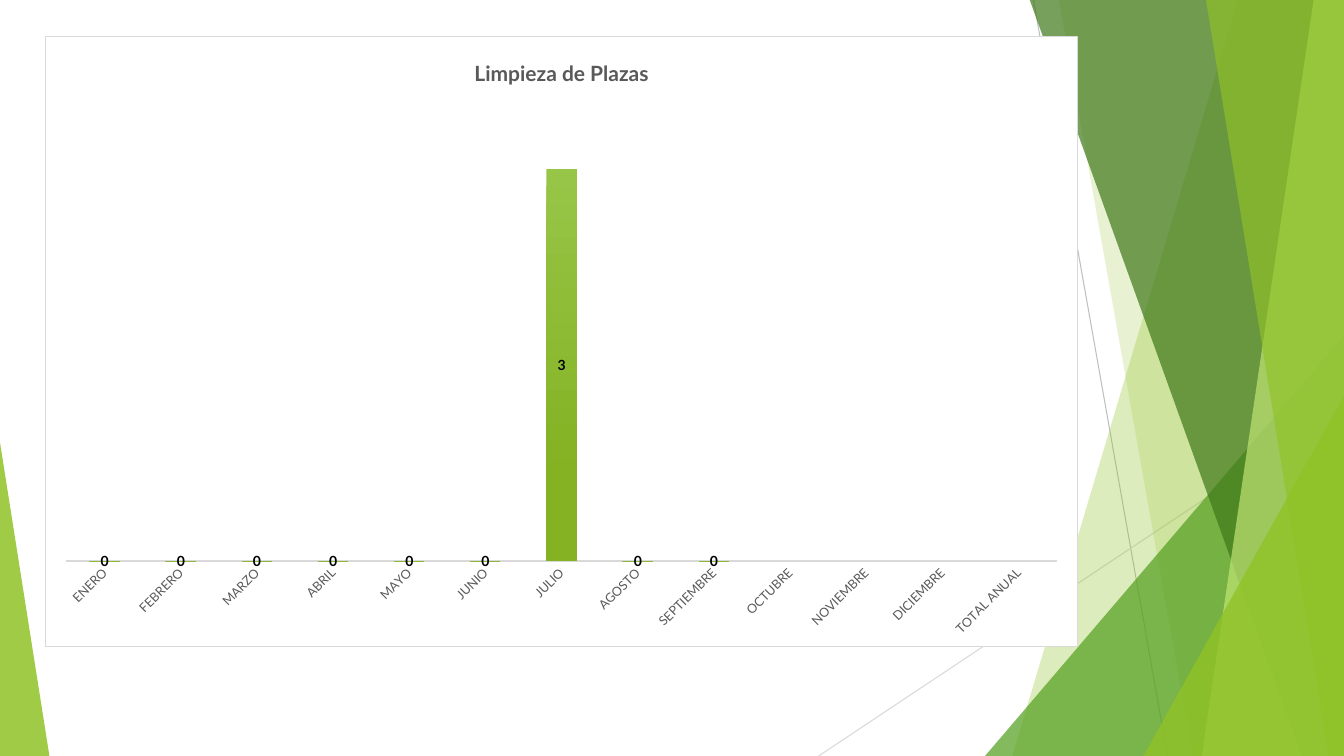
from dataclasses import dataclass

from lxml import etree
from pptx import Presentation
from pptx.chart.data import CategoryChartData
from pptx.dml.color import RGBColor as RGB
from pptx.enum.chart import XL_CHART_TYPE as CT, XL_LABEL_POSITION as LP, XL_TICK_MARK as TICK
from pptx.enum.shapes import MSO_CONNECTOR as CONN, MSO_SHAPE as SHAPE
from pptx.oxml import parse_xml
from pptx.oxml.ns import nsdecls, qn
from pptx.util import Inches, Pt


@dataclass(frozen=True)
class Theme:
    font: str = "Lato"
    white: str = "FFFFFF"
    black: str = "000000"
    text: str = "595959"
    rule: str = "D9D9D9"
    dark_rule: str = "BFBFBF"
    lime: str = "90C226"
    pale: str = "C0E474"
    green: str = "54A021"
    forest: str = "3F7819"
    bar_top: str = "97C547"
    bar_bottom: str = "84B223"
    title_size: float = 15
    label_size: float = 10
    axis_size: float = 9


T = Theme()
W, H = 13.33, 7.5
MONTHS = ["ENERO", "FEBRERO", "MARZO", "ABRIL", "MAYO", "JUNIO", "JULIO", "AGOSTO",
          "SEPTIEMBRE", "OCTUBRE", "NOVIEMBRE", "DICIEMBRE", "TOTAL ANUAL"]
CLEANINGS = [0, 0, 0, 0, 0, 0, 3, 0, 0, None, None, None, None]


def paint(shape, color, opacity):
    """Fill a borderless shape; opacity is a percentage."""
    shape.shadow.inherit = False
    shape.line.fill.background()
    shape.fill.solid()
    shape.fill.fore_color.rgb = RGB.from_string(color)
    clr = shape._element.spPr.find(f"{qn('a:solidFill')}/{qn('a:srgbClr')}")
    etree.SubElement(clr, qn("a:alpha"), val=str(opacity * 1000))


def add_line(s, start, end, color):
    line = s.shapes.add_connector(CONN.STRAIGHT, *map(Inches, start + end))
    line.line.color.rgb = RGB.from_string(color)
    line.line.width = Pt(0.75)
    etree.SubElement(line._element.spPr, qn("a:effectLst"))


def add_band(s, top_x, bottom_x, color, opacity):
    """Full-height band from a slanted left edge to the slide's right side."""
    top = -0.01
    fb = s.shapes.build_freeform(Inches(top_x), Inches(top), scale=1.0)
    corners = [(W, top), (W, H), (bottom_x, H)]
    fb.add_line_segments([(Inches(x), Inches(y)) for x, y in corners], close=True)
    paint(fb.convert_to_shape(), color, opacity)


def add_corner(s, left, top, width, apex, color, opacity):
    """Right triangle standing on the slide's bottom; apex 0 is left, 1 right."""
    tri = s.shapes.add_shape(SHAPE.ISOSCELES_TRIANGLE, Inches(left), Inches(top),
                             Inches(width), Inches(H - top))
    tri.adjustments[0] = apex
    paint(tri, color, opacity)


def add_backdrop(s):
    add_line(s, (10.25, 0), (11.58, H), T.dark_rule)
    add_line(s, (W, 4.03), (8.12, H), T.rule)
    add_band(s, 12.28, 10.04, T.lime, 30)
    add_band(s, 10.5, 11.83, T.lime, 20)
    add_corner(s, 9.77, 3.33, 3.56, 1, T.green, 72)
    add_band(s, 10.21, 12.91, T.forest, 70)
    add_band(s, 13.03, 11.92, T.pale, 70)
    add_band(s, 11.96, 13.18, T.lime, 65)
    add_corner(s, 11.34, 3.93, 1.99, 1, T.lime, 80)
    add_corner(s, 0, 4.39, 0.49, 0, T.lime, 85)


def set_font(font, size, color, bold=False):
    font.name, font.size, font.bold = T.font, Pt(size), bold
    font.color.rgb = RGB.from_string(color)


def frame_chart(chart):
    """Give the chart area its fill and border, and fix the plot's place."""
    chart._chartSpace.find(qn("c:chart")).addnext(parse_xml(
        f'<c:spPr {nsdecls("c", "a")}>'
        f'<a:solidFill><a:srgbClr val="{T.white}"/></a:solidFill>'
        f'<a:ln w="9525"><a:solidFill><a:srgbClr val="{T.rule}"/></a:solidFill></a:ln>'
        '</c:spPr>'))
    plot_area = chart._chartSpace.find(f".//{qn('c:plotArea')}")
    for old in plot_area.findall(qn("c:layout")):
        plot_area.remove(old)
    box = "".join(f'<c:{k} val="{v}"/>' for k, v in
                  [("layoutTarget", "inner"), ("xMode", "edge"), ("yMode", "edge"),
                   ("x", 0.02), ("y", 0.11), ("w", 0.96), ("h", 0.75)])
    plot_area.insert(0, parse_xml(
        f'<c:layout {nsdecls("c")}><c:manualLayout>{box}</c:manualLayout></c:layout>'))


def style_axes(chart):
    months, values = chart.category_axis, chart.value_axis
    months.major_tick_mark = months.minor_tick_mark = TICK.NONE
    months.format.line.color.rgb = RGB.from_string(T.rule)
    months.format.line.width = Pt(1)
    set_font(months.tick_labels.font, T.axis_size, T.text)
    body = months._element.find(f"{qn('c:txPr')}/{qn('a:bodyPr')}")
    body.set("rot", "-2700000")
    body.set("vert", "horz")
    values.visible = values.has_major_gridlines = False
    values.minimum_scale, values.maximum_scale = 0, 3.5


def style_bars(plot):
    plot.gap_width, plot.overlap = 150, 100
    plot.vary_by_categories = False
    fill = plot.series[0].format.fill
    fill.gradient()
    fill.gradient_angle = 270
    stops = zip(fill.gradient_stops, [(0, T.bar_top), (0.78, T.bar_bottom)])
    for stop, (position, color) in stops:
        stop.position = position
        stop.color.rgb = RGB.from_string(color)
    plot.has_data_labels = True
    labels = plot.data_labels
    labels.show_value = True
    labels.position = LP.CENTER
    set_font(labels.font, T.label_size, T.black, bold=True)


def add_cleaning_chart(s, left, top, width, height):
    data = CategoryChartData()
    data.categories = MONTHS
    data.add_series("Series 1", CLEANINGS)
    chart = s.shapes.add_chart(CT.COLUMN_STACKED, Inches(left), Inches(top),
                               Inches(width), Inches(height), data).chart
    set_font(chart.font, T.label_size, T.black)
    chart.has_legend = False
    chart.has_title = True
    r = chart.chart_title.text_frame.paragraphs[0].add_run()
    r.text = "Limpieza de Plazas"
    set_font(r.font, T.title_size, T.text, bold=True)
    frame_chart(chart)
    style_axes(chart)
    style_bars(chart.plots[0])


def main():
    prs = Presentation()
    prs.slide_width, prs.slide_height = Inches(W), Inches(H)
    s = prs.slides.add_slide(prs.slide_layouts[6])
    add_backdrop(s)
    add_cleaning_chart(s, 0.45, 0.36, 10.24, 6.06)
    prs.save("out.pptx")


if __name__ == "__main__":
    main()
